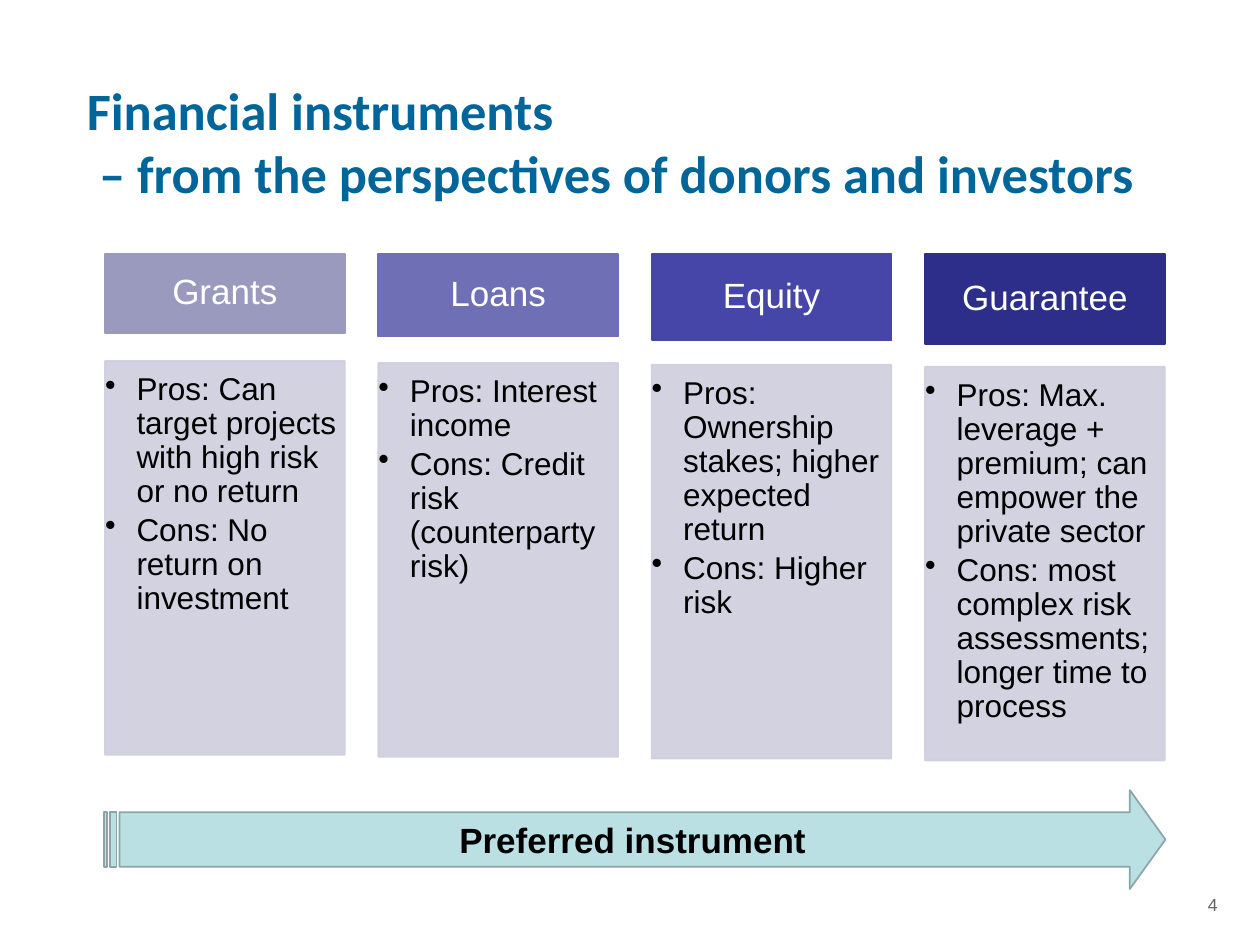
from lxml.etree import SubElement
from pptx import Presentation
from pptx.dml.color import RGBColor
from pptx.enum.shapes import MSO_SHAPE as Shape
from pptx.enum.text import MSO_ANCHOR as Anchor, PP_ALIGN as Align
from pptx.oxml.ns import qn
from pptx.util import Pt

INSTRUMENTS = [
    ("Grants", "9A9ABF",
     "Pros: Can target projects with high risk or no return",
     "Cons: No return on investment"),
    ("Loans", "6F6FB5",
     "Pros: Interest income",
     "Cons: Credit risk (counterparty risk)"),
    ("Equity", "4646A8",
     "Pros: Ownership stakes; higher expected return",
     "Cons: Higher risk"),
    ("Guarantee", "2D2D8A",
     "Pros: Max. leverage + premium; can empower the private sector",
     "Cons: most complex risk assessments; longer time to process"),
]
HEADER = {"size": Pt(20), "name": "Arial", "color": "FFFFFF"}
BODY = {"size": Pt(18), "name": "Arial", "color": "000000"}
ARROW = {"size": Pt(20), "name": "Arial", "color": "000000", "bold": True}
TITLE = {"size": Pt(30), "name": "Calibri", "color": "006699", "bold": True}
NUMBER = {"size": Pt(10), "name": "Arial", "color": "646464"}


def color(hex_string):
    """Return the colour for a hex string."""
    return RGBColor.from_string(hex_string)


def set_font(font, formats):
    """Apply a dict of format values to a font."""
    for name, value in formats.items():
        if name == "color":
            font.color.rgb = color(value)
        else:
            setattr(font, name, value)


def set_frame(frame, horizontal, vertical, anchor=Anchor.TOP):
    """Set wrapping, insets and anchor of a text frame."""
    formats = {"word_wrap": True, "vertical_anchor": anchor,
               "margin_left": Pt(horizontal), "margin_right": Pt(horizontal),
               "margin_top": Pt(vertical), "margin_bottom": Pt(vertical)}
    for name, value in formats.items():
        setattr(frame, name, value)


def set_indent(paragraph, margin, bullet=None):
    """Give a paragraph a hanging indent and an optional bullet."""
    properties = paragraph._p.get_or_add_pPr()
    properties.set("marL", str(Pt(margin)))
    properties.set("indent", str(-Pt(margin)))
    if bullet:
        SubElement(properties, qn("a:buChar"), char=bullet)


def write(paragraph, text, formats, align=Align.LEFT):
    """Fill a paragraph with formatted text."""
    paragraph.text = text
    paragraph.alignment = align
    set_font(paragraph.font, formats)
    for run in paragraph.runs:
        set_font(run.font, formats)


def add_text(slide, box, text, formats, insets, align=Align.LEFT):
    """Add a text box and return its paragraph."""
    frame = slide.shapes.add_textbox(*map(Pt, box)).text_frame
    set_frame(frame, *insets)
    write(frame.paragraphs[0], text, formats, align)
    return frame.paragraphs[0]


def add_block(slide, kind, box, fill, line, alpha=None):
    """Add a filled and outlined shape."""
    shape = slide.shapes.add_shape(kind, *map(Pt, box))
    shape.shadow.inherit = False
    shape.fill.solid()
    shape.fill.fore_color.rgb = color(fill)
    shape.line.color.rgb = color(line)
    shape.line.width = Pt(1)
    if alpha:
        for element in shape._element.spPr.iter(qn("a:srgbClr")):
            SubElement(element, qn("a:alpha"), val=str(alpha * 1000))
    return shape


def add_header(slide, box, name, fill):
    """Add the coloured header of an instrument."""
    frame = add_block(slide, Shape.RECTANGLE, box, fill, fill).text_frame
    set_frame(frame, 11.5, 6.5, Anchor.MIDDLE)
    paragraph = frame.paragraphs[0]
    write(paragraph, name, HEADER, Align.CENTER)
    paragraph.line_spacing = 0.9


def add_body(slide, box, points):
    """Add the bulleted pros and cons of an instrument."""
    shape = add_block(slide, Shape.RECTANGLE, box, "CECEDE", "CECEDE", 90)
    frame = shape.text_frame
    set_frame(frame, 0, 7.2)
    for index, point in enumerate(points):
        paragraph = frame.add_paragraph() if index else frame.paragraphs[0]
        set_indent(paragraph, 18, "•")
        write(paragraph, point, BODY)
        paragraph.line_spacing = 0.9
        paragraph.space_after = Pt(2.7)


def add_arrow(slide, box, text):
    """Add the striped arrow with its label."""
    shape = add_block(slide, Shape.STRIPED_RIGHT_ARROW, box, "BBE0E3", "8AA6A8")
    shape.adjustments[0] = 0.55
    shape.adjustments[1] = 0.36
    set_frame(shape.text_frame, 7.2, 3.6, Anchor.MIDDLE)
    write(shape.text_frame.paragraphs[0], text, ARROW, Align.CENTER)


def main():
    """Build and save the slide."""
    presentation = Presentation()
    presentation.slide_width, presentation.slide_height = Pt(720), Pt(540)
    slide = presentation.slides.add_slide(presentation.slide_layouts[6])

    add_text(slide, (666, 511, 54, 29), "4", NUMBER, (0, 0), Align.CENTER)
    title = add_text(
        slide, (42.5, 41, 663, 80),
        "Financial instruments\v– from the perspectives of donors and investors",
        TITLE, (7.2, 3.6))
    set_indent(title, 7)

    for index, (name, fill, *points) in enumerate(INSTRUMENTS):
        left = 60 + 156.2 * index
        add_header(slide, (left, 145.2, 137, 45 + 2.1 * index), name, fill)
        add_body(slide, (left, 206.3 + 1.1 * index, 137, 225), points)

    add_arrow(slide, (59.5, 451.5, 606.5, 56.5), "Preferred instrument")
    presentation.save("out.pptx")


if __name__ == "__main__":
    main()
